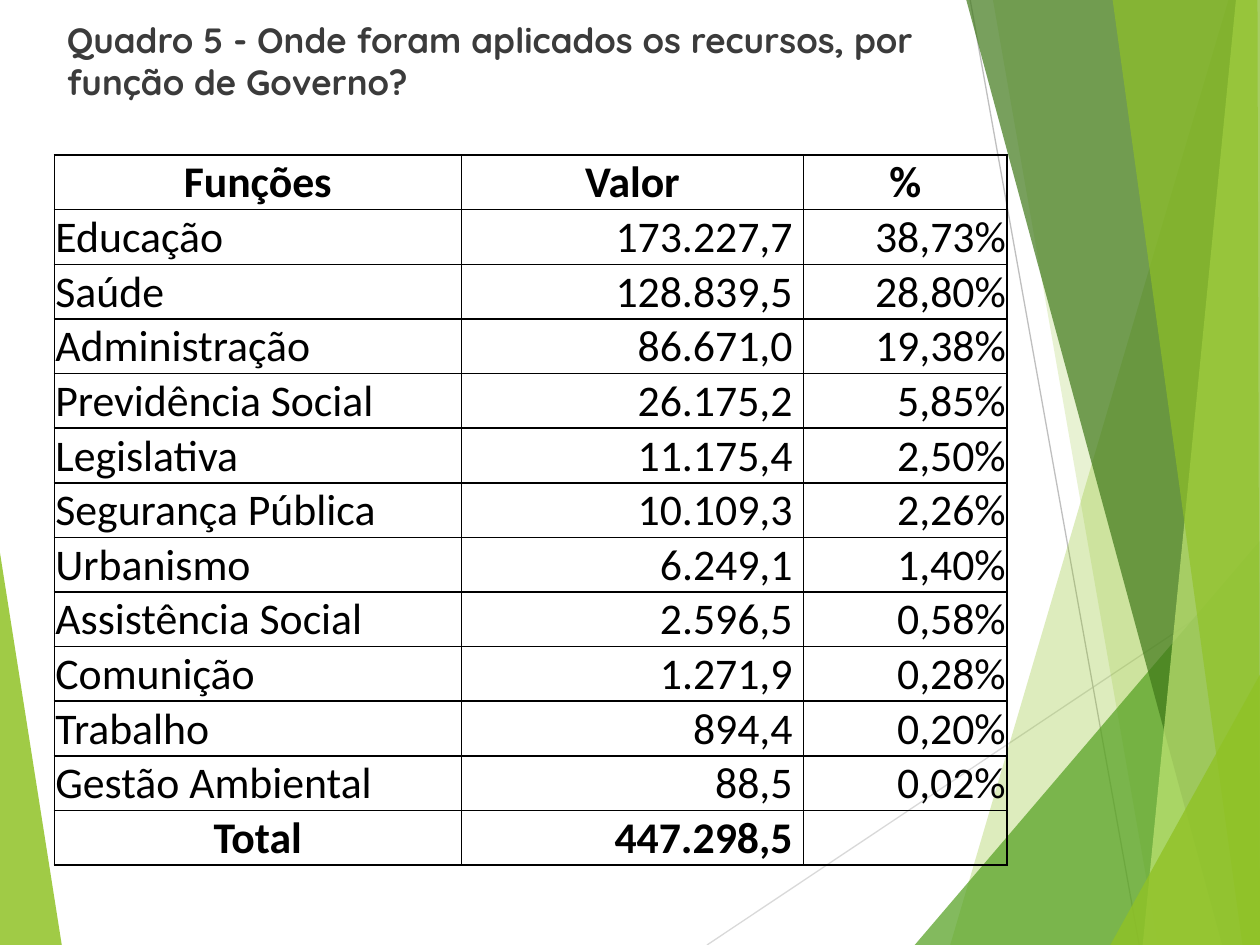
from dataclasses import dataclass

from lxml.etree import SubElement
from pptx import Presentation
from pptx.dml.color import RGBColor
from pptx.enum.shapes import MSO_CONNECTOR
from pptx.enum.text import MSO_ANCHOR, MSO_AUTO_SIZE, PP_ALIGN
from pptx.oxml.ns import qn
from pptx.util import Pt


@dataclass(frozen=True)
class Theme:
    lime: str = "90C226"
    green: str = "54A021"
    dark_green: str = "3F7819"
    pale_green: str = "C0E474"
    light_gray: str = "D9D9D9"
    gray: str = "BFBFBF"
    title_color: str = "3B3B3B"
    black: str = "000000"
    title_font: str = "Quicksand"
    table_font: str = "Calibri"
    title_size: float = 20
    table_size: float = 25


THEME = Theme()
WIDTH, HEIGHT = 720, 540

# Decorative lines: start, end, color
LINES = [
    ((404, 540), (720, 329), THEME.light_gray),
    ((554.4, 0), (651, 540), THEME.gray),
]

# Decorative panels: corners, color, opacity in percent
LEFT_PANEL = ([(0, 316), (35.3, 540), (0, 540)], THEME.lime, 85)
RIGHT_PANELS = [
    ([(702, 0), (543, 540), (720, 540), (720, 0)], THEME.lime, 30),
    ([(567.4, 0), (661.7, 540), (720, 540), (720, 0)], THEME.lime, 20),
    ([(522.7, 540), (720, 309), (720, 540)], THEME.green, 72),
    ([(552.2, 0), (698.4, 540), (720, 540), (720, 0)], THEME.dark_green, 70),
    ([(706.3, 0), (653, 540), (720, 540), (720, 0)], THEME.pale_green, 70),
    ([(635.8, 0), (710, 540), (720, 540), (718.6, 0)], THEME.lime, 65),
    ([(634.5, 540), (720, 385.5), (720, 540)], THEME.lime, 80),
]

ROWS = [
    ("Funções", "Valor", "%"),
    ("Educação", "173.227,7", "38,73%"),
    ("Saúde", "128.839,5", "28,80%"),
    ("Administração", "86.671,0", "19,38%"),
    ("Previdência Social", "26.175,2", "5,85%"),
    ("Legislativa", "11.175,4", "2,50%"),
    ("Segurança Pública", "10.109,3", "2,26%"),
    ("Urbanismo", "6.249,1", "1,40%"),
    ("Assistência Social", "2.596,5", "0,58%"),
    ("Comunição", "1.271,9", "0,28%"),
    ("Trabalho", "894,4", "0,20%"),
    ("Gestão Ambiental", "88,5", "0,02%"),
    ("Total", "447.298,5", ""),
]
COLUMN_WIDTHS = (232.6, 195.6, 116.2)
ROW_HEIGHT = 31.23


def add_panel(slide, corners, color, opacity):
    points = [(Pt(x), Pt(y)) for x, y in corners]
    builder = slide.shapes.build_freeform(*points[0])
    builder.add_line_segments(points[1:], close=True)
    panel = builder.convert_to_shape()
    panel.shadow.inherit = False
    panel.line.fill.background()
    panel.fill.solid()
    panel.fill.fore_color.rgb = RGBColor.from_string(color)
    color_element = panel.element.spPr.find(qn("a:solidFill"))[0]
    SubElement(color_element, qn("a:alpha"), val=str(opacity * 1000))


def add_line(slide, start, end, color):
    line = slide.shapes.add_connector(
        MSO_CONNECTOR.STRAIGHT, *map(Pt, start + end))
    line.line.color.rgb = RGBColor.from_string(color)
    line.line.width = Pt(0.75)
    SubElement(line.element.spPr, qn("a:effectLst"))


def format_font(font, name, size, color, bold):
    font.name = name
    font.size = Pt(size)
    font.bold = bold
    font.color.rgb = RGBColor.from_string(color)


def set_title(slide, text):
    title = slide.shapes.title
    title.left, title.top, title.width, title.height = map(
        Pt, (31, 7.2, 527.8, 53.3))
    frame = title.text_frame
    frame.text = text
    frame.word_wrap = True
    frame.auto_size = MSO_AUTO_SIZE.NONE
    frame.vertical_anchor = MSO_ANCHOR.TOP
    para = frame.paragraphs[0]
    para.alignment = PP_ALIGN.LEFT
    para.line_spacing = 1.0
    format_font(para.runs[0].font, THEME.title_font, THEME.title_size,
                THEME.title_color, True)
    # Bring the title in front of the decoration
    title.element.getparent().append(title.element)


def add_borders(cell):
    properties = cell._tc.get_or_add_tcPr()
    for side in ("lnL", "lnR", "lnT", "lnB"):
        border = SubElement(properties, qn(f"a:{side}"), w=str(Pt(1)))
        fill = SubElement(border, qn("a:solidFill"))
        SubElement(fill, qn("a:srgbClr"), val=THEME.black)


def format_cell(cell, text, alignment, anchor, bold, right_margin):
    cell.margin_left, cell.margin_top = Pt(0.7), Pt(0.7)
    cell.margin_right, cell.margin_bottom = Pt(right_margin), Pt(0)
    cell.vertical_anchor = anchor
    add_borders(cell)
    cell.fill.background()
    para = cell.text_frame.paragraphs[0]
    para.text = text
    para.alignment = alignment
    for span in para.runs:
        format_font(span.font, THEME.table_font, THEME.table_size,
                    THEME.black, bold)


def add_spending_table(slide):
    frame = slide.shapes.add_table(
        len(ROWS), len(COLUMN_WIDTHS), Pt(31), Pt(88.6),
        Pt(sum(COLUMN_WIDTHS)), Pt(ROW_HEIGHT * len(ROWS)))
    table = frame.table
    table.first_row = table.horz_banding = False
    for column, width in zip(table.columns, COLUMN_WIDTHS):
        column.width = Pt(width)
    last = len(ROWS) - 1
    for r, values in enumerate(ROWS):
        table.rows[r].height = Pt(ROW_HEIGHT)
        header, bold = r == 0, r in (0, last)
        for c, value in enumerate(values):
            if header or (bold and c == 0):
                alignment = PP_ALIGN.CENTER
            else:
                alignment = PP_ALIGN.RIGHT if c else PP_ALIGN.LEFT
            anchor = MSO_ANCHOR.MIDDLE if header else MSO_ANCHOR.BOTTOM
            # Amounts sit a little away from the column edge
            right_margin = 6.4 if c == 1 and not header else 0.7
            format_cell(table.cell(r, c), value, alignment, anchor, bold,
                        right_margin)


def main():
    deck = Presentation()
    deck.slide_width, deck.slide_height = Pt(WIDTH), Pt(HEIGHT)
    slide = deck.slides.add_slide(deck.slide_layouts[5])

    # Decoration
    add_panel(slide, *LEFT_PANEL)
    for line in LINES:
        add_line(slide, *line)
    for panel in RIGHT_PANELS:
        add_panel(slide, *panel)

    # Content
    set_title(slide, "Quadro 5 - Onde foram aplicados os recursos, "
                     "por função de Governo?")
    add_spending_table(slide)
    deck.save("out.pptx")


if __name__ == "__main__":
    main()
